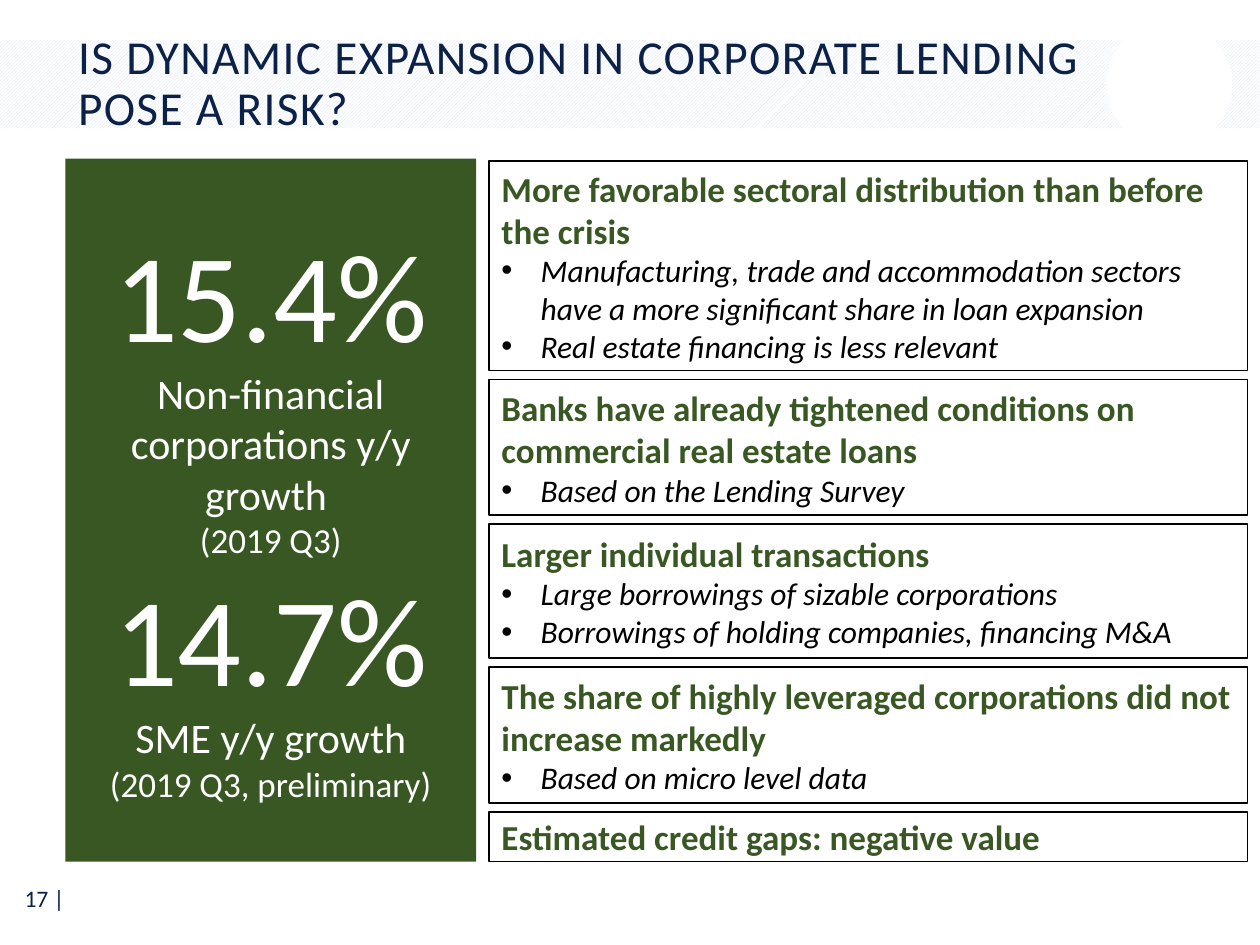
from pptx import Presentation
from pptx.dml.color import RGBColor
from pptx.enum.dml import MSO_PATTERN
from pptx.enum.shapes import MSO_SHAPE
from pptx.enum.text import MSO_ANCHOR, MSO_AUTO_SIZE, PP_ALIGN
from pptx.oxml.ns import qn
from pptx.util import Cm, Pt
from lxml import etree

RECT, OVAL = MSO_SHAPE.RECTANGLE, MSO_SHAPE.OVAL
HATCH = MSO_PATTERN.LIGHT_UPWARD_DIAGONAL
MID = MSO_ANCHOR.MIDDLE
FIXED = MSO_AUTO_SIZE.NONE
LEFT, MIDDLE, RIGHT = PP_ALIGN.LEFT, PP_ALIGN.CENTER, PP_ALIGN.RIGHT
NAVY, GREEN, WHITE, BLACK = "0C2148", "385723", "FFFFFF", "000000"


def color(code):
    return RGBColor.from_string(code)


def write(para, text, size, code, align=LEFT, bold=False, italic=False):
    para.alignment = align
    run = para.add_run()
    run.text = text
    font = run.font
    font.name, font.size = "Calibri", Pt(size)
    font.bold, font.italic = bold, italic
    font.color.rgb = color(code)
    return run


deck = Presentation()
deck.slide_width, deck.slide_height = Cm(25.4), Cm(19.05)
slide = deck.slides.add_slide(deck.slide_layouts[5])
shapes = slide.shapes

band = shapes.add_shape(RECT, Cm(0), Cm(0.81), Cm(25.4), Cm(1.78))
band.shadow.inherit = False
band.fill.patterned()
band.fill.pattern = HATCH
band.fill.fore_color.rgb = color("DAE5F9")
band.fill.back_color.rgb = color(WHITE)
band.line.fill.background()

disc = shapes.add_shape(OVAL, Cm(22.3), Cm(0.43), Cm(2.54), Cm(2.54))
disc.shadow.inherit = False
disc.fill.solid()
disc.fill.fore_color.rgb = color(WHITE)
disc.line.fill.background()

title = shapes.title
title.left, title.top = Cm(1.32), Cm(0.86)
title.width, title.height = Cm(21.13), Cm(1.7)
frame = title.text_frame
frame.word_wrap, frame.auto_size = True, FIXED
frame.vertical_anchor = MID
para = frame.paragraphs[0]
para.line_spacing = 0.9
run = write(para, "IS DYNAMIC EXPANSION IN CORPORATE LENDING POSE A RISK?", 27, NAVY)
run.font._element.set("spc", "80")
shapes._spTree.append(title._element)

page = shapes.add_textbox(Cm(0.03), Cm(17.63), Cm(1.52), Cm(0.94))
page.text_frame.word_wrap = True
page.text_frame.vertical_anchor = MID
write(page.text_frame.paragraphs[0], "17 |", 13.5, NAVY, RIGHT)

panel = shapes.add_shape(RECT, Cm(1.32), Cm(3.2), Cm(8.28), Cm(14.17))
panel.shadow.inherit = False
panel.fill.solid()
panel.fill.fore_color.rgb = color(GREEN)
panel.line.fill.background()
frame = panel.text_frame
frame.word_wrap = True
frame.vertical_anchor = MID
facts = [
    ("15.4%", 72),
    ("Non-financial corporations y/y growth ", 24),
    ("(2019 Q3)", 20),
    ("14.7%", 72),
    ("SME y/y growth", 24),
    ("(2019 Q3, preliminary)", 20),
]
for i, (text, size) in enumerate(facts):
    para = frame.add_paragraph() if i else frame.paragraphs[0]
    write(para, text, size, WHITE, MIDDLE)

cards = [
    (4.22, "More favorable sectoral distribution than before the crisis",
     ["Manufacturing, trade and accommodation sectors have a more significant share in loan expansion",
      "Real estate financing is less relevant"]),
    (2.74, "Banks have already tightened conditions on commercial real estate loans",
     ["Based on the Lending Survey"]),
    (2.7, "Larger individual transactions",
     ["Large borrowings of sizable corporations",
      "Borrowings of holding companies, financing M&A"]),
    (2.74, "The share of highly leveraged corporations did not increase markedly",
     ["Based on micro level data"]),
    (1, "Estimated credit gaps: negative value", []),
]
top, gap = 3.25, 0.18
for height, head, points in cards:
    card = shapes.add_shape(RECT, Cm(9.86), Cm(top), Cm(15.29), Cm(height))
    top += height + gap
    card.shadow.inherit = False
    card.fill.background()
    card.line.color.rgb = color(BLACK)
    card.line.width = Pt(1)
    frame = card.text_frame
    frame.word_wrap = True
    frame.vertical_anchor = MID
    frame.margin_top = frame.margin_bottom = Cm(0.05)
    write(frame.paragraphs[0], head, 20, GREEN, bold=True)
    for point in points:
        para = frame.add_paragraph()
        props = para._p.get_or_add_pPr()
        props.set("marL", str(Cm(0.79)))
        props.set("indent", str(-Cm(0.79)))
        etree.SubElement(props, qn("a:buFont")).set("typeface", "Arial")
        etree.SubElement(props, qn("a:buChar")).set("char", "•")
        write(para, point, 18, BLACK, italic=True)

deck.save("out.pptx")
